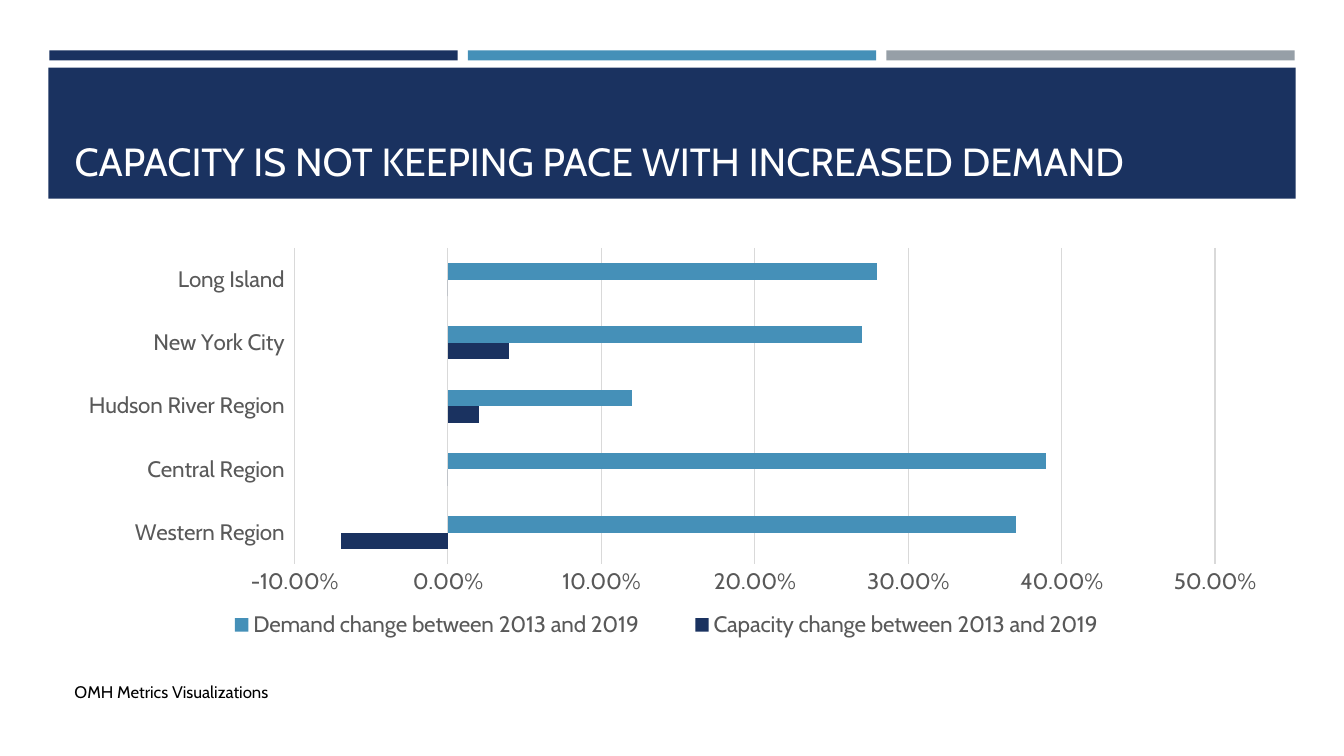
from dataclasses import dataclass

from lxml import etree
from pptx import Presentation
from pptx.chart.data import CategoryChartData
from pptx.dml.color import RGBColor
from pptx.enum.chart import XL_CHART_TYPE as ChartType
from pptx.enum.chart import XL_LEGEND_POSITION as LegendPosition
from pptx.enum.chart import XL_TICK_LABEL_POSITION as LabelPosition
from pptx.enum.chart import XL_TICK_MARK as TickMark
from pptx.enum.shapes import MSO_SHAPE as Preset
from pptx.enum.text import MSO_ANCHOR as Anchor
from pptx.enum.text import PP_ALIGN as Align
from pptx.oxml.ns import qn
from pptx.util import Inches, Pt


@dataclass(frozen=True)
class Theme:
    font: str = "Cabin"
    navy: str = "1A3260"
    blue: str = "4590B8"
    gray: str = "969FA7"
    white: str = "FFFFFF"
    black: str = "000000"
    label: str = "595959"
    rule: str = "D9D9D9"
    title_size: int = 28
    chart_size: int = 16
    source_size: int = 12
    rule_width: float = 0.75


THEME = Theme()
PAGE_WIDTH, PAGE_HEIGHT = 13.33, 7.5
BAND_LEFT, BAND_WIDTH = 0.48, 12.37
TEXT_LEFT, TEXT_WIDTH = 0.64, 12.06
STRIPE_LEFT, STRIPE_WIDTH, STRIPE_GAP = 0.49, 4.05, 0.1

REGIONS = ["Western Region", "Central Region", "Hudson River Region",
           "New York City", "Long Island"]
CHANGES = [
    ("Capacity change between 2013 and 2019", THEME.navy,
     [-0.07, 0, 0.02, 0.04, 0]),
    ("Demand change between 2013 and 2019", THEME.blue,
     [0.37, 0.39, 0.12, 0.27, 0.28]),
]


def inches(*lengths):
    return [Inches(length) for length in lengths]


def paint(fill, color):
    fill.solid()
    fill.fore_color.rgb = RGBColor.from_string(color)


def style_font(font, size, color):
    font.name = THEME.font
    font.size = Pt(size)
    font.bold = False
    font.color.rgb = RGBColor.from_string(color)


def style_rule(line):
    paint(line.fill, THEME.rule)
    line.width = Pt(THEME.rule_width)


def add_band(page, left, top, width, height, color):
    band = page.shapes.add_shape(Preset.RECTANGLE, *inches(left, top, width, height))
    band.shadow.inherit = False
    paint(band.fill, color)
    band.line.fill.background()


def write(box, text, size, color, anchor=Anchor.TOP):
    frame = box.text_frame
    frame.word_wrap = True
    frame.vertical_anchor = anchor
    para = frame.paragraphs[0]
    para.alignment = Align.LEFT
    span = para.add_run()
    span.text = text
    style_font(span.font, size, color)


def add_title(page, text):
    title = page.shapes.title
    title.left, title.top, title.width, title.height = inches(
        TEXT_LEFT, 0.77, TEXT_WIDTH, 1.11)
    write(title, text, THEME.title_size, THEME.white, anchor=Anchor.BOTTOM)
    # The title must stand in front of its band.
    page.shapes._spTree.append(title._element)


def add_source(page, text):
    box = page.shapes.add_textbox(*inches(TEXT_LEFT, 6.71, PAGE_WIDTH / 2, 0.3))
    write(box, text, THEME.source_size, THEME.black)


def place_legend(legend, **shares):
    """Set x, y, w and h of the legend as shares of the chart's size."""
    element = legend._element
    for old in element.findall(qn("c:layout")):
        element.remove(old)
    layout = etree.Element(qn("c:layout"))
    manual = etree.SubElement(layout, qn("c:manualLayout"))
    for side in ("xMode", "yMode"):
        etree.SubElement(manual, qn(f"c:{side}"), val="edge")
    for side, share in shares.items():
        etree.SubElement(manual, qn(f"c:{side}"), val=str(share))
    element.find(qn("c:legendPos")).addnext(layout)


def style_axes(chart):
    regions, percent = chart.category_axis, chart.value_axis
    for axis in (regions, percent):
        axis.major_tick_mark = axis.minor_tick_mark = TickMark.NONE
        style_font(axis.tick_labels.font, THEME.chart_size, THEME.label)
    regions.tick_label_position = LabelPosition.LOW
    style_rule(regions.format.line)
    percent.minimum_scale, percent.maximum_scale = -0.1, 0.5
    percent.major_unit = 0.1
    percent.tick_labels.number_format = "0.00%"
    percent.tick_labels.number_format_is_linked = False
    percent.format.line.fill.background()
    style_rule(percent.major_gridlines.format.line)


def add_change_chart(page):
    data = CategoryChartData(number_format="0.00%")
    data.categories = REGIONS
    for name, _, values in CHANGES:
        data.add_series(name, values)
    chart = page.shapes.add_chart(
        ChartType.BAR_CLUSTERED, *inches(TEXT_LEFT, 2.38, TEXT_WIDTH, 4.02), data).chart
    style_font(chart.font, THEME.chart_size, THEME.label)
    chart.has_title = False
    chart.has_legend = True
    chart.legend.position = LegendPosition.BOTTOM
    chart.legend.include_in_layout = False
    style_font(chart.legend.font, THEME.chart_size, THEME.label)
    place_legend(chart.legend, x=0.1, y=0.91, w=0.79, h=0.08)
    plot = chart.plots[0]
    plot.gap_width = 182
    plot.vary_by_categories = False
    for series, (_, color, _) in zip(plot.series, CHANGES):
        series.invert_if_negative = False
        paint(series.format.fill, color)
    style_axes(chart)


def main():
    deck = Presentation()
    deck.slide_width, deck.slide_height = inches(PAGE_WIDTH, PAGE_HEIGHT)
    page = deck.slides.add_slide(deck.slide_layouts.get_by_name("Title Only"))
    for column, color in enumerate((THEME.navy, THEME.blue, THEME.gray)):
        left = STRIPE_LEFT + column * (STRIPE_WIDTH + STRIPE_GAP)
        add_band(page, left, 0.5, STRIPE_WIDTH, 0.1, color)
    add_band(page, BAND_LEFT, 0.67, BAND_WIDTH, 1.3, THEME.navy)
    add_title(page, "CAPACITY IS NOT KEEPING PACE WITH INCREASED DEMAND")
    add_change_chart(page)
    add_source(page, "OMH Metrics Visualizations")
    deck.save("out.pptx")


if __name__ == "__main__":
    main()
